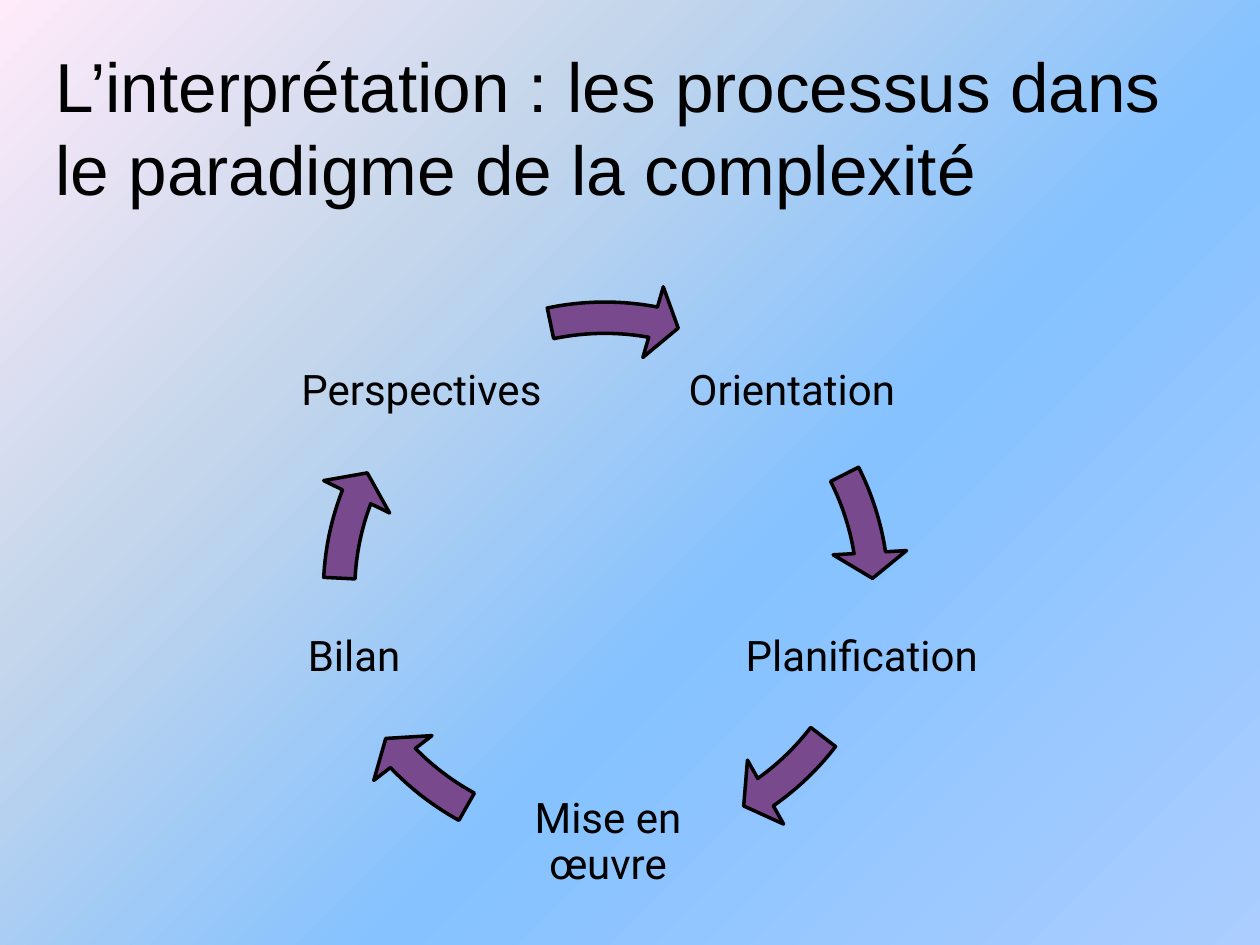
from pptx import Presentation
from pptx.dml.color import RGBColor
from pptx.enum.shapes import MSO_SHAPE
from pptx.enum.text import MSO_ANCHOR, MSO_AUTO_SIZE, PP_ALIGN
from pptx.oxml import parse_xml
from pptx.util import Inches, Pt

ARROW = MSO_SHAPE.CIRCULAR_ARROW
MIDDLE = MSO_ANCHOR.MIDDLE
LEFT, CENTER = PP_ALIGN.LEFT, PP_ALIGN.CENTER
FIXED = MSO_AUTO_SIZE.NONE
COLORS = {"text": "000000", "arrow": "79498D", "line": "000000"}
STOPS = [(0, "ABCDFF"), (40, "85C2FF"), (70, "C4D6EB"), (100, "FFEBFA")]
NS = "http://schemas.openxmlformats.org/drawingml/2006/main"


class Deck:
    def __init__(self):
        self.prs = Presentation()
        self.prs.slide_width, self.prs.slide_height = Inches(10), Inches(7.5)
        self.slide = self.prs.slides.add_slide(self.prs.slide_layouts[5])

    def color(self, name):
        return RGBColor.from_string(COLORS[name])

    def set_text(self, frame, text, font, size, align):
        frame.text = text
        frame.word_wrap = True
        frame.auto_size = FIXED
        frame.vertical_anchor = MIDDLE
        para = frame.paragraphs[0]
        para.alignment = align
        style = para.runs[0].font
        style.name, style.size = font, Pt(size)
        style.color.rgb = self.color("text")
        return para

    def backdrop(self):
        fill = self.slide.background.fill
        fill.solid()
        stops = "".join(
            f'<a:gs pos="{pos * 1000}"><a:srgbClr val="{tint}"/></a:gs>'
            for pos, tint in STOPS)
        grad = parse_xml(
            f'<a:gradFill xmlns:a="{NS}" rotWithShape="1"><a:gsLst>{stops}</a:gsLst>'
            '<a:path path="circle"><a:fillToRect l="100000" t="100000"/></a:path>'
            '</a:gradFill>')
        solid = self.slide.element.find(f".//{{{NS}}}solidFill")
        solid.getparent().replace(solid, grad)

    def title(self, text, x, y, w, h):
        box = self.slide.shapes.title
        box.left, box.top = Inches(x), Inches(y)
        box.width, box.height = Inches(w), Inches(h)
        self.set_text(box.text_frame, text, "Arial", 39.6, LEFT)

    def label(self, text, x, y, w, h=1.28):
        box = self.slide.shapes.add_textbox(
            Inches(x), Inches(y), Inches(w), Inches(h))
        frame = box.text_frame
        frame.margin_left = frame.margin_right = Inches(0.03)
        frame.margin_top = frame.margin_bottom = Inches(0.03)
        para = self.set_text(frame, text, "Roboto", 24, CENTER)
        para.line_spacing = 0.9

    def arrow(self, x, y, w, end, start, h=4.78):
        shape = self.slide.shapes.add_shape(
            ARROW, Inches(x), Inches(y), Inches(w), Inches(h))
        for i, value in enumerate((0.052, 3.361, end, start, 0.061)):
            shape.adjustments[i] = value
        shape.shadow.inherit = False
        shape.fill.solid()
        shape.fill.fore_color.rgb = self.color("arrow")
        shape.line.color.rgb = self.color("line")
        shape.line.width = Pt(2)


STEPS = [
    ("Orientation", (5.39, 2.47, 1.79), (2.44, 2.32, 4.78, 210.68, 199.93)),
    ("Planification", (5.72, 4.58, 2.24), (2.48, 2.18, 4.78, 32.95, 22.54)),
    ("Mise en œuvre", (3.78, 6.05, 2.09), (2.32, 2.18, 4.84, 82.1, 71.69)),
    ("Bilan", (2.17, 4.58, 1.28), (2.4, 2.3, 4.84, 120.35, 109.64)),
    ("Perspectives", (2.32, 2.47, 2.05), (2.41, 2.23, 4.78, 168.32, 154.89)),
]


def main():
    deck = Deck()
    deck.backdrop()
    deck.title("L’interprétation : les processus dans le paradigme de la complexité",
               0.34, 0.29, 9.32, 1.42)
    for text, place, turn in STEPS:
        deck.label(text, *place)
        deck.arrow(*turn)
    deck.prs.save("out.pptx")


if __name__ == "__main__":
    main()
